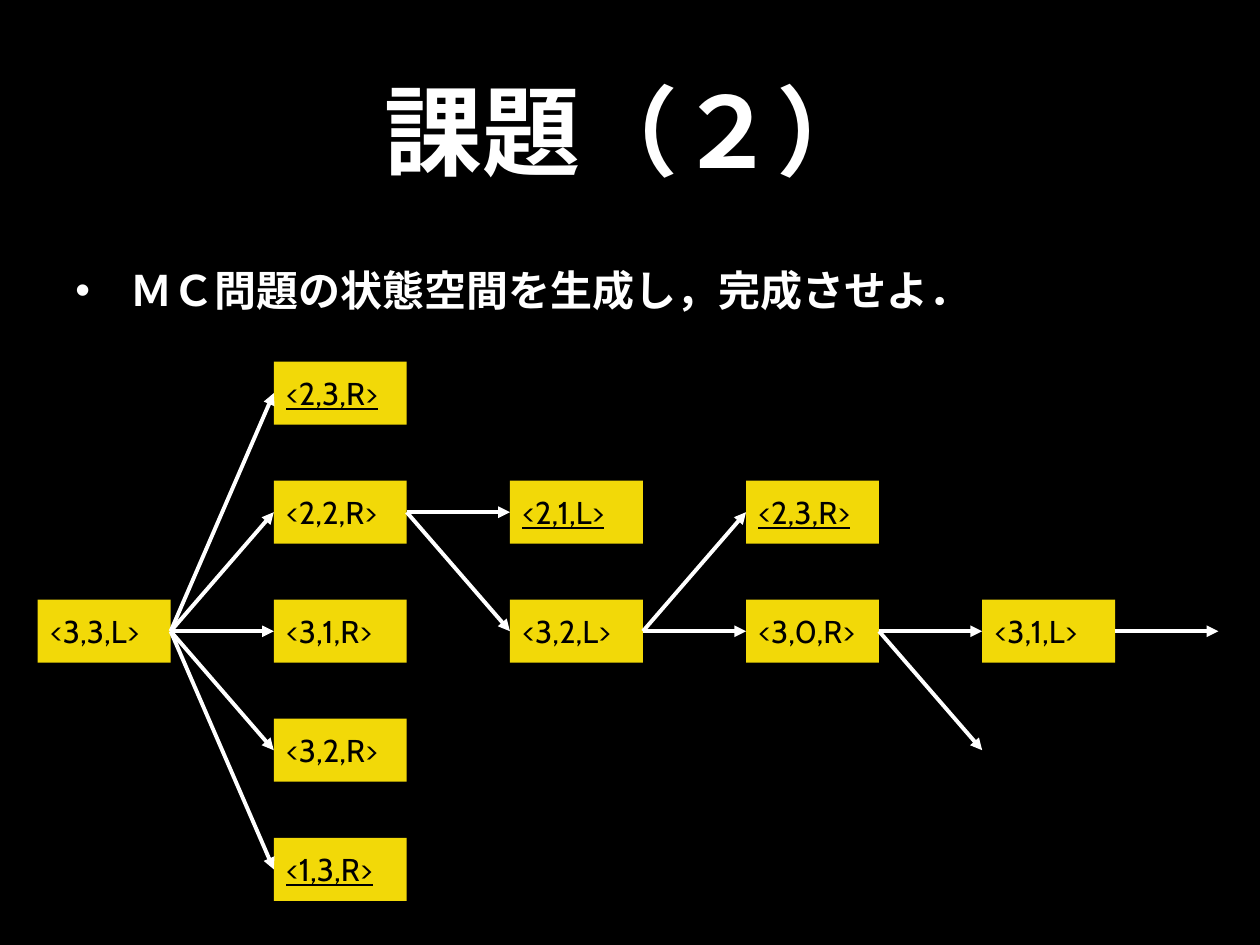
from dataclasses import dataclass

from lxml.etree import SubElement
from pptx import Presentation
from pptx.dml.color import RGBColor
from pptx.enum.lang import MSO_LANGUAGE_ID as Language
from pptx.enum.shapes import MSO_CONNECTOR as Connector, MSO_SHAPE as Shape
from pptx.enum.text import MSO_ANCHOR as Anchor, PP_ALIGN as Align
from pptx.oxml.ns import qn
from pptx.util import Cm, Pt

COLORS = {"background": "000000", "light": "FFFFFF", "state": "F2D908", "dark": "000000"}
FONT = "Cabin"
GRID_LEFT, GRID_TOP = 0.76, 7.29
COLUMN_STEP, ROW_STEP = 4.76, 2.4
BOX_WIDTH, BOX_HEIGHT = 2.68, 1.27
RIGHT_SIDE, LEFT_SIDE = 3, 1


@dataclass(frozen=True)
class State:
    column: int
    row: int
    label: str
    repeated: bool = False

    @property
    def cell(self) -> tuple[int, int]:
        return self.column, self.row


@dataclass(frozen=True)
class Move:
    start: tuple[int, int]
    end: tuple[int, int]


STATES = [
    State(0, 2, "<3,3,L>"),
    State(1, 0, "<2,3,R>", True),
    State(1, 1, "<2,2,R>"),
    State(1, 2, "<3,1,R>"),
    State(1, 3, "<3,2,R>"),
    State(1, 4, "<1,3,R>", True),
    State(2, 1, "<2,1,L>", True),
    State(2, 2, "<3,2,L>"),
    State(3, 1, "<2,3,R>", True),
    State(3, 2, "<3,0,R>"),
    State(4, 2, "<3,1,L>"),
]
MOVES = [Move((0, 2), (1, row)) for row in range(5)] + [
    Move((1, 1), (2, 1)),
    Move((1, 1), (2, 2)),
    Move((2, 2), (3, 1)),
    Move((2, 2), (3, 2)),
    Move((3, 2), (4, 2)),
    Move((3, 2), (4, 3)),
    Move((4, 2), (5, 2)),
]


def color(name: str) -> RGBColor:
    return RGBColor.from_string(COLORS[name])


def corner(cell: tuple[int, int]) -> tuple[float, float]:
    """Return the left and top of a grid cell in centimetres."""
    column, row = cell
    return GRID_LEFT + column * COLUMN_STEP, GRID_TOP + row * ROW_STEP


def add_text(para, text: str, size: int, color_name: str):
    span = para.add_run()
    span.text = text
    span.font.name = FONT
    span.font.size = Pt(size)
    span.font.color.rgb = color(color_name)
    return span


def add_heading(page, text: str, size: int, left: float, top: float,
                width: float, height: float):
    """Add a bold Japanese text box and return its paragraph."""
    box = page.shapes.add_textbox(Cm(left), Cm(top), Cm(width), Cm(height))
    box.text_frame.word_wrap = True
    para = box.text_frame.paragraphs[0]
    span = add_text(para, text, size, "light")
    span.font.bold = True
    span.font.language_id = Language.JAPANESE
    SubElement(span.font._element, qn("a:ea"), typeface=FONT)
    return box, para


def add_bullet(para, indent: float) -> None:
    properties = para._p.get_or_add_pPr()
    properties.set("marL", str(Cm(indent)))
    properties.set("indent", str(-Cm(indent)))
    SubElement(properties, qn("a:buFont"), typeface="Arial")
    SubElement(properties, qn("a:buChar"), char="•")


def add_state(page, state: State):
    left, top = corner(state.cell)
    box = page.shapes.add_shape(
        Shape.RECTANGLE, Cm(left), Cm(top), Cm(BOX_WIDTH), Cm(BOX_HEIGHT))
    box.shadow.inherit = False
    box.fill.solid()
    box.fill.fore_color.rgb = color("state")
    box.line.fill.background()
    frame = box.text_frame
    frame.word_wrap = False
    frame.vertical_anchor = Anchor.MIDDLE
    para = frame.paragraphs[0]
    para.alignment = Align.LEFT
    span = add_text(para, state.label, 18, "dark")
    if state.repeated:
        span.font.underline = True
    return box


def add_move(page, move: Move, boxes: dict) -> None:
    """Draw an arrow, joined to the boxes that exist at its ends."""
    start_left, start_top = corner(move.start)
    end_left, end_top = corner(move.end)
    half = BOX_HEIGHT / 2
    arrow = page.shapes.add_connector(
        Connector.STRAIGHT, Cm(start_left + BOX_WIDTH), Cm(start_top + half),
        Cm(end_left), Cm(end_top + half))
    arrow.begin_connect(boxes[move.start], RIGHT_SIDE)
    if move.end in boxes:
        arrow.end_connect(boxes[move.end], LEFT_SIDE)
    arrow.line.color.rgb = color("light")
    arrow.line.width = Pt(2.25)
    SubElement(arrow.line._get_or_add_ln(), qn("a:tailEnd"), type="triangle")
    SubElement(arrow._element.spPr, qn("a:effectLst"))


def main() -> None:
    deck = Presentation()
    deck.slide_width, deck.slide_height = Cm(25.4), Cm(19.05)
    page = deck.slides.add_slide(deck.slide_layouts[6])
    page.background.fill.solid()
    page.background.fill.fore_color.rgb = color("background")

    title, title_para = add_heading(page, "課題（２）", 56, 2.16, 0.3, 21.06, 4.6)
    title.text_frame.vertical_anchor = Anchor.MIDDLE
    title_para.alignment = Align.CENTER
    _, task_para = add_heading(
        page, "ＭＣ問題の状態空間を生成し，完成させよ．", 24, 1.27, 5.21, 22.86, 1.88)
    add_bullet(task_para, 1.12)

    boxes = {state.cell: add_state(page, state) for state in STATES}
    for move in MOVES:
        add_move(page, move, boxes)
    deck.save("out.pptx")


if __name__ == "__main__":
    main()
